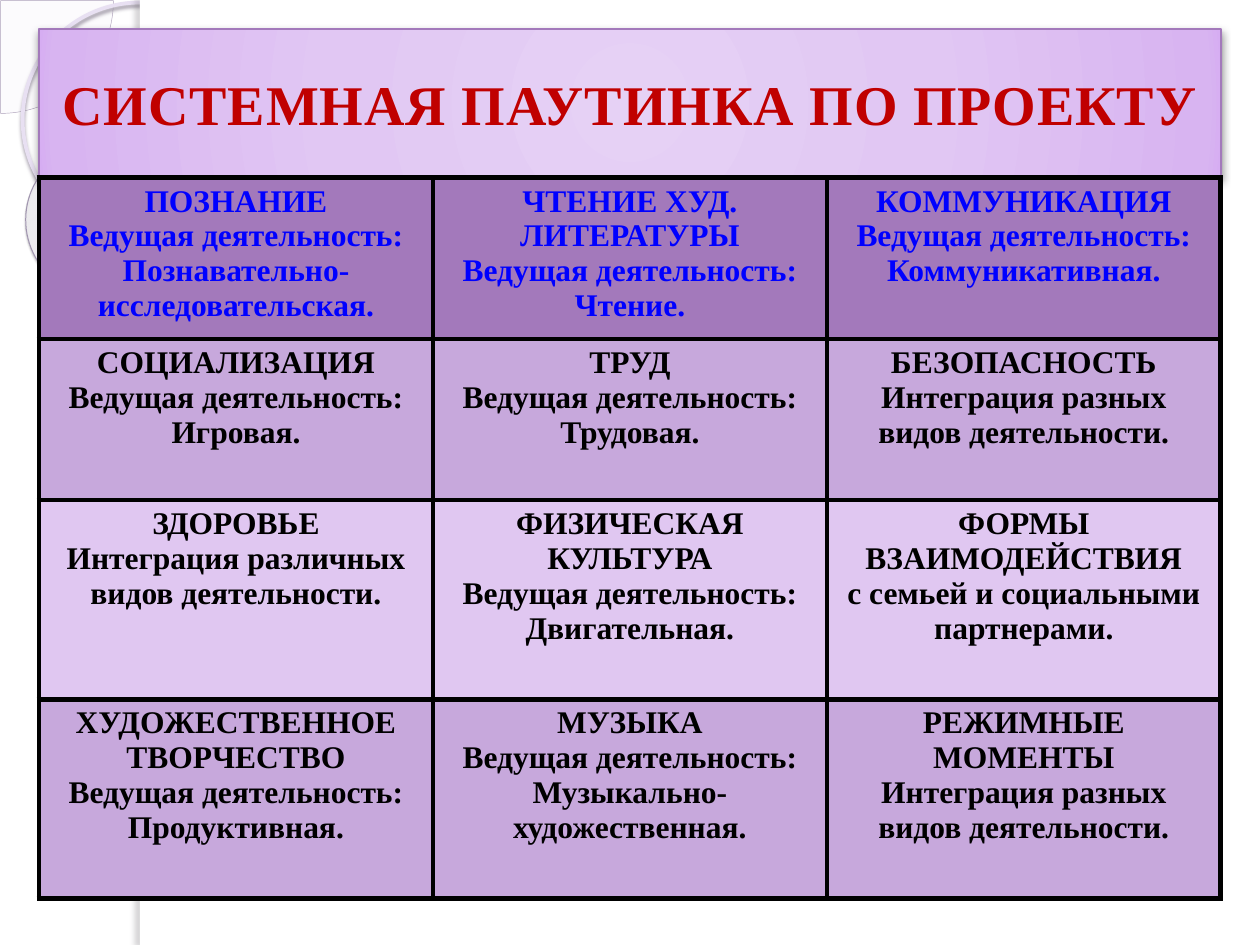
from pptx import Presentation
from pptx.dml.color import RGBColor
from pptx.enum.shapes import MSO_SHAPE
from pptx.enum.text import MSO_ANCHOR, PP_ALIGN
from pptx.oxml import parse_xml
from pptx.oxml.ns import nsdecls, qn
from pptx.util import Inches, Pt

PIE, OVAL, DONUT, RECT = MSO_SHAPE.PIE, MSO_SHAPE.OVAL, MSO_SHAPE.DONUT, MSO_SHAPE.RECTANGLE
CENTER, MIDDLE = PP_ALIGN.CENTER, MSO_ANCHOR.MIDDLE

WHITE = RGBColor(0xFF, 0xFF, 0xFF)
BLACK = RGBColor(0, 0, 0)
BLUE = RGBColor(0, 0, 0xFF)
RED = RGBColor(0xC0, 0, 0)
PLUM = RGBColor(0xA3, 0x79, 0xBB)
LILAC = RGBColor(0xC7, 0xA8, 0xDC)
PALE = RGBColor(0xE0, 0xC7, 0xF1)
MIST = RGBColor(0xF6, 0xF4, 0xF9)
HAZE = RGBColor(0xE8, 0xE0, 0xF2)
SLATE = RGBColor(0xAC, 0xA0, 0xB9)
STEEL = RGBColor(0xA0, 0x94, 0xAF)

LEAD = "Ведущая деятельность:"
MIXED = "Интеграция разных видов деятельности."
ROWS = [
    (1.28, PLUM, BLUE, [
        ["ПОЗНАНИЕ", LEAD, "Познавательно-исследовательская."],
        ["ЧТЕНИЕ ХУД. ЛИТЕРАТУРЫ", LEAD, "Чтение."],
        ["КОММУНИКАЦИЯ", LEAD, "Коммуникативная."]]),
    (1.28, LILAC, BLACK, [
        ["СОЦИАЛИЗАЦИЯ", LEAD, "Игровая."],
        ["ТРУД", LEAD, "Трудовая."],
        ["БЕЗОПАСНОСТЬ", MIXED]]),
    (1.58, PALE, BLACK, [
        ["ЗДОРОВЬЕ", "Интеграция различных видов деятельности."],
        ["ФИЗИЧЕСКАЯ КУЛЬТУРА", LEAD, "Двигательная."],
        ["ФОРМЫ ВЗАИМОДЕЙСТВИЯ", "с семьей и социальными партнерами."]]),
    (1.58, LILAC, BLACK, [
        ["ХУДОЖЕСТВЕННОЕ ТВОРЧЕСТВО", LEAD, "Продуктивная."],
        ["МУЗЫКА", LEAD, "Музыкально-художественная."],
        ["РЕЖИМНЫЕ МОМЕНТЫ", MIXED]]),
]


class Deck:
    """Holds the text style and the current slide, and draws each kind of element."""

    def __init__(self, slide):
        self.slide = slide
        self.style = {"name": "Times New Roman", "bold": True}

    def tint(self, color, alpha):
        return f'<a:srgbClr val="{color}"><a:alpha val="{alpha * 1000}"/></a:srgbClr>'

    def shape(self, kind, box, fill=None, line=None, alpha=100, turn=0, adjust=()):
        item = self.slide.shapes.add_shape(kind, *map(Inches, box))
        item.shadow.inherit = False
        item.rotation = turn
        for i, value in enumerate(adjust):
            item.adjustments[i] = value
        if fill is None:
            item.fill.background()
        else:
            item.fill.solid()
            item.fill.fore_color.rgb = fill
            clear = parse_xml(f'<a:alpha {nsdecls("a")} val="{alpha * 1000}"/>')
            item._element.spPr.find(f".//{qn('a:srgbClr')}").append(clear)
        if line:
            item.line.color.rgb, item.line.width = line[0], Pt(line[1])
        else:
            item.line.fill.background()
        return item

    def blend(self, item, stops, focus):
        marks = "".join(f'<a:gs pos="{at * 1000}">{self.tint(color, alpha)}</a:gs>'
                        for at, color, alpha in stops)
        rect = " ".join(f'{side}="{value * 1000}"' for side, value in zip("ltrb", focus))
        grad = parse_xml(f'<a:gradFill {nsdecls("a")} rotWithShape="1"><a:gsLst>{marks}</a:gsLst>'
                         f'<a:path path="circle"><a:fillToRect {rect}/></a:path></a:gradFill>')
        frame = item._element.spPr
        frame.replace(frame.find(qn("a:noFill")), grad)

    def shade(self, item, color, alpha, blur, dist, angle):
        item._element.spPr.find(qn("a:effectLst")).append(parse_xml(
            f'<a:outerShdw {nsdecls("a")} blurRad="{Pt(blur)}" dist="{Pt(dist)}" '
            f'dir="{angle * 60000}" rotWithShape="0">{self.tint(color, alpha)}</a:outerShdw>'))

    def text(self, frame, lines, color, size):
        for i, line in enumerate(lines):
            par = frame.add_paragraph() if i else frame.paragraphs[0]
            par.alignment = CENTER
            run = par.add_run()
            run.text = line
            for key, value in {**self.style, "size": Pt(size)}.items():
                setattr(run.font, key, value)
            run.font.color.rgb = color

    def title(self, item, words):
        frame = item.text_frame
        frame.word_wrap, frame.vertical_anchor = True, MIDDLE
        self.text(frame, [words], RED, 32)
        frame.paragraphs[0].runs[0].font._element.set("spc", "50")

    def edge(self, cell, color, width):
        for side in "LRTB":
            cell._tc.get_or_add_tcPr().append(parse_xml(
                f'<a:ln{side} {nsdecls("a")} w="{Pt(width)}">'
                f'<a:solidFill>{self.tint(color, 100)}</a:solidFill></a:ln{side}>'))

    def table(self, box, rows):
        grid = self.slide.shapes.add_table(len(rows), len(rows[0][3]), *map(Inches, box)).table
        grid.first_row = grid.horz_banding = False
        for row, (height, fill, color, texts) in zip(grid.rows, rows):
            row.height = Inches(height)
            for cell, lines in zip(row.cells, texts):
                self.edge(cell, BLACK, 3)
                cell.fill.solid()
                cell.fill.fore_color.rgb = fill
                self.text(cell.text_frame, lines, color, 18)


def main():
    show = Presentation()
    show.slide_width, show.slide_height = Inches(10), Inches(7.5)
    deck = Deck(show.slides.add_slide(show.slide_layouts[6]))

    deck.shape(PIE, (-0.89, -0.89, 1.79, 1.79), MIST, (SLATE, 0.25), 33, adjust=(0, 54))
    ring = deck.shape(OVAL, (0.18, 0.02, 1.86, 1.86), line=(HAZE, 2.15))
    deck.shade(ring, "958D9D", 85, 2, 2, 90)
    donut = deck.shape(DONUT, (0.2, 1.15, 1.23, 1.21), line=(STEEL, 0.58), turn=38.6, adjust=(0.12,))
    deck.blend(donut, [(0, "F9F7FB", 70), (70, "FCFBFE", 55), (100, "B099CA", 60)],
               (-408, -50, 508, 150))
    deck.shade(donut, "4A4550", 35, 1, 1.2, 75)
    deck.shape(RECT, (1.11, 0, 8.89, 7.5), WHITE)
    strip = deck.shape(RECT, (1.11, 0, 0.08, 7.5), WHITE)
    deck.shade(strip, "646068", 25, 3, 3, 180)

    head = deck.shape(RECT, (0.31, 0.23, 9.38, 1.17), line=(PLUM, 0.75))
    deck.blend(head, [(0, "E6D1F5", 100), (50, "E1C7F3", 100), (97, "D8B4F1", 100),
                      (100, "D6ADF2", 100)], (50, 50, 50, 50))
    deck.shade(head, "000000", 43, 5, 2, 90)
    deck.title(head, "СИСТЕМНАЯ ПАУТИНКА ПО ПРОЕКТУ")
    deck.table((0.31, 1.41, 9.38, 5.72), ROWS)
    show.save("out.pptx")


if __name__ == "__main__":
    main()
